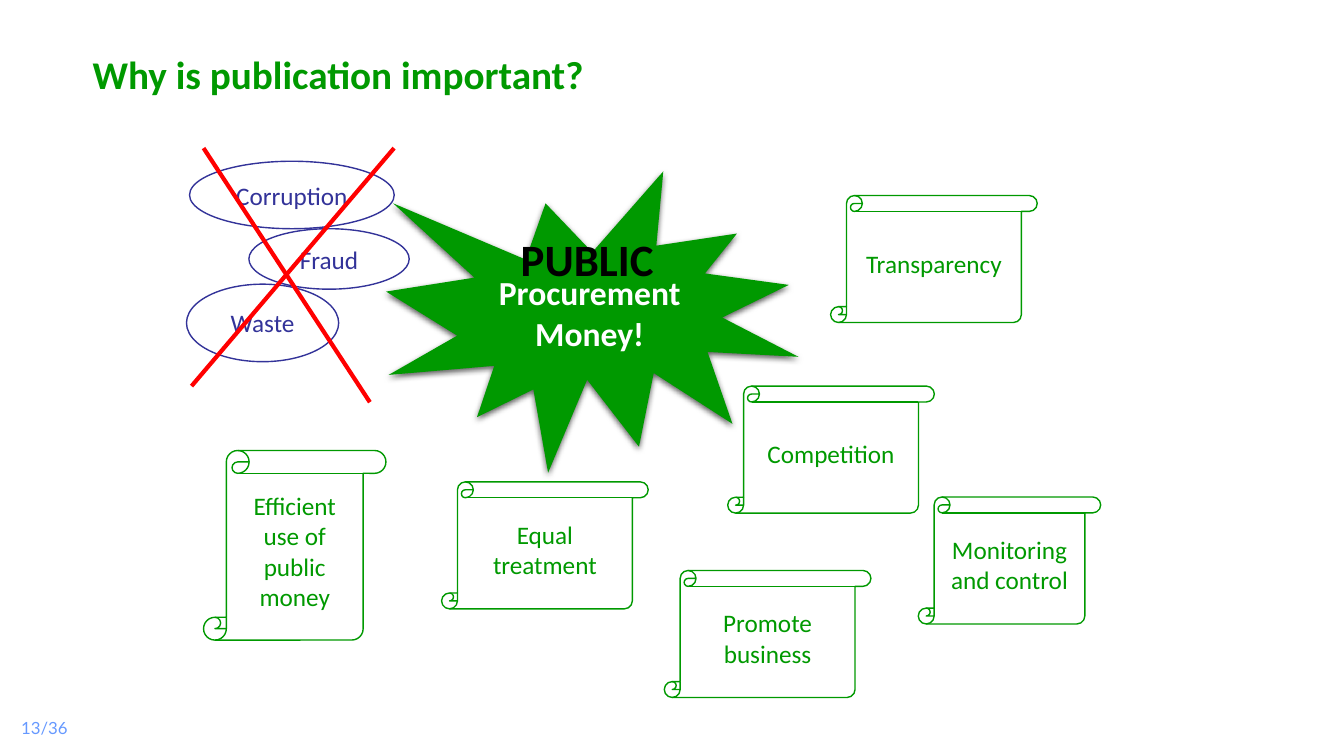
"""Build the slide on why publication is important."""
from lxml import etree
from pptx import Presentation
from pptx.dml.color import RGBColor
from pptx.enum import shapes as kinds, text as txt
from pptx.oxml import parse_xml
from pptx.oxml.ns import qn
from pptx.util import Pt

GREEN, NAVY, RED = "009900", "333399", "FF0000"
WHITE, BLACK, BLUE = "FFFFFF", "000000", "6699FF"
MID, RIGHT, LEFT = txt.PP_ALIGN.CENTER, txt.PP_ALIGN.RIGHT, txt.PP_ALIGN.LEFT
KIND = kinds.MSO_SHAPE


def paint(part, hue):
    if hasattr(part, "solid"):
        part.solid()
        part.fore_color.rgb = RGBColor.from_string(hue)
    else:
        part.color.rgb = RGBColor.from_string(hue)


def write(shape, words, size, hue, bold=False, align=MID, font="Calibri"):
    frame = shape.text_frame
    frame.word_wrap = True
    frame.vertical_anchor = txt.MSO_ANCHOR.MIDDLE
    para = frame.paragraphs[0]
    para.alignment = align
    run = para.add_run()
    run.text = words
    run.font.name, run.font.size, run.font.bold = font, Pt(size), bold
    paint(run.font, hue)


deck = Presentation()
deck.slide_width, deck.slide_height = Pt(960), Pt(540)
slide = deck.slides.add_slide(deck.slide_layouts[5])
items = slide.shapes

title = items.title
title.left, title.top, title.width, title.height = Pt(66.2), Pt(10), Pt(826.6), Pt(59.8)
write(title, "Why is publication important?", 28, GREEN, True, LEFT)
frame = title.text_frame
frame.vertical_anchor = txt.MSO_ANCHOR.BOTTOM
frame.margin_left = frame.margin_right = frame.margin_bottom = Pt(0)
frame.margin_top = Pt(3.6)
frame.paragraphs[0].line_spacing = 0.9

star = items.add_shape(KIND.EXPLOSION1, Pt(275.8), Pt(122.4), Pt(294.5), Pt(215.3))
paint(star.fill, GREEN)
star.line.fill.background()
star._element.spPr.append(parse_xml(
    '<a:effectLst xmlns:a="http://schemas.openxmlformats.org/drawingml/2006/main">'
    '<a:outerShdw blurRad="57150" dist="19050" dir="5400000" algn="ctr" rotWithShape="0">'
    '<a:srgbClr val="000000"><a:alpha val="63000"/></a:srgbClr>'
    '</a:outerShdw></a:effectLst>'))
write(star, "Procurement Money!", 24, WHITE, True)

public = items.add_textbox(Pt(344.2), Pt(167.8), Pt(150.5), Pt(33.8))
write(public, "PUBLIC", 32, BLACK, True)

goals = [
    ("Efficient use of public money", 145.4, 321.8, 130.3, 135.4),
    ("Competition", 519.8, 275.8, 147.6, 90.7),
    ("Monitoring and control", 655.9, 355, 130.3, 90.7),
    ("Transparency", 593.3, 139.7, 147.6, 90.7),
    ("Equal treatment", 315.4, 344.2, 147.6, 90.7),
    ("Promote business", 474.5, 407.5, 147.6, 90.7),
]
risks = [
    ("Fraud", 177.8, 163.4, 114.5, 43.2),
    ("Waste", 133.2, 203, 108.7, 55.4),
    ("Corruption", 135.4, 115.2, 146.2, 48.2),
]
for kind, hue, group in ((KIND.VERTICAL_SCROLL, GREEN, goals), (KIND.OVAL, NAVY, risks)):
    for words, *box in group:
        shape = items.add_shape(kind, *map(Pt, box))
        shape.shadow.inherit = False
        shape.fill.background()
        paint(shape.line, hue)
        shape.line.width = Pt(1)
        write(shape, words, 18, hue)

for ends in ((145.4, 105.8, 264.2, 287.3), (136.8, 275.8, 281.5, 105.8)):
    cross = items.add_connector(kinds.MSO_CONNECTOR.STRAIGHT, *map(Pt, ends))
    paint(cross.line, RED)
    cross.line.width = Pt(3)
    etree.SubElement(cross._element.spPr, qn("a:effectLst"))

page = items.add_textbox(Pt(0), Pt(505.4), Pt(55.4), Pt(28.8))
write(page, "13/36", 12, BLUE, align=RIGHT, font="Lato")

deck.save("out.pptx")
